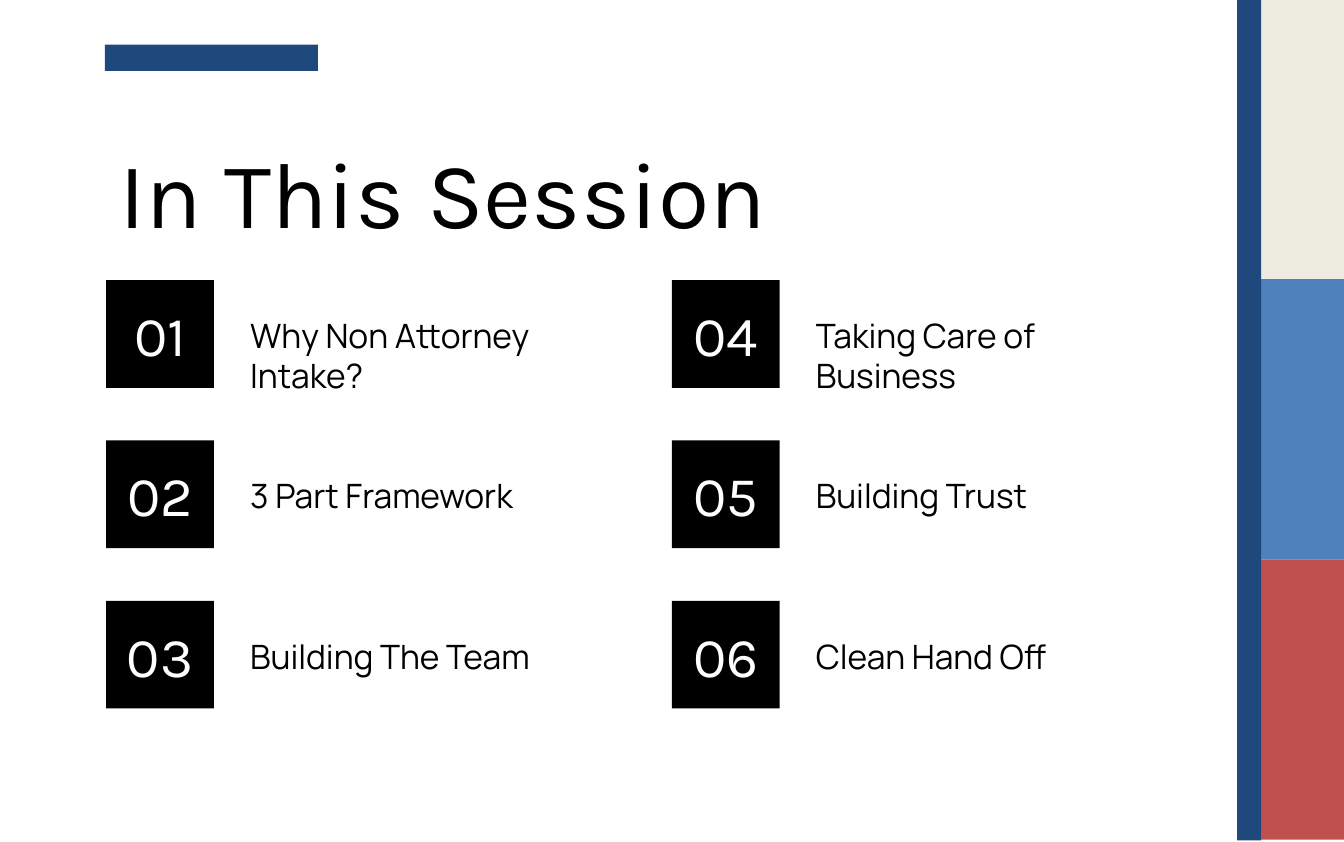
from dataclasses import dataclass

from pptx import Presentation
from pptx.dml.color import RGBColor
from pptx.enum.shapes import MSO_SHAPE
from pptx.enum.text import MSO_ANCHOR, MSO_AUTO_SIZE, PP_ALIGN
from pptx.util import Cm, Pt

RECTANGLE = MSO_SHAPE.RECTANGLE
TOP, MIDDLE = MSO_ANCHOR.TOP, MSO_ANCHOR.MIDDLE
LEFT, CENTER = PP_ALIGN.LEFT, PP_ALIGN.CENTER
NO_AUTOFIT = MSO_AUTO_SIZE.NONE
TITLE_ONLY = 5


@dataclass(frozen=True)
class Theme:
    black: str = "000000"
    white: str = "FFFFFF"
    navy: str = "1F497D"
    cream: str = "EEECE1"
    blue: str = "4F81BD"
    red: str = "C0504D"
    heading_font: str = "Karla"
    body_font: str = "Manrope"
    title_size: float = 56.5
    number_size: float = 33.8
    topic_size: float = 20.2
    inset: float = 0.28


class SlideBuilder:
    """Holds the theme and the slide; all lengths are in centimetres."""

    def __init__(self, slide, theme):
        self.slide = slide
        self.theme = theme

    def set_text(self, shape, text, font, size, color, align=LEFT, anchor=TOP):
        frame = shape.text_frame
        frame.auto_size = NO_AUTOFIT
        frame.word_wrap = True
        frame.vertical_anchor = anchor
        inset = Cm(self.theme.inset)
        frame.margin_left = frame.margin_right = inset
        frame.margin_top = frame.margin_bottom = inset
        frame.text = text
        paragraph = frame.paragraphs[0]
        paragraph.alignment = align
        paragraph.font.name = font
        paragraph.font.size = Pt(size)
        paragraph.font.color.rgb = RGBColor.from_string(color)

    def title(self, text, left, top, width, height):
        title = self.slide.shapes.title
        title.left, title.top = Cm(left), Cm(top)
        title.width, title.height = Cm(width), Cm(height)
        self.set_text(title, text, self.theme.heading_font, self.theme.title_size,
                      self.theme.black)

    def block(self, color, left, top, width, height):
        block = self.slide.shapes.add_shape(RECTANGLE, Cm(left), Cm(top), Cm(width), Cm(height))
        block.shadow.inherit = False
        block.fill.solid()
        block.fill.fore_color.rgb = RGBColor.from_string(color)
        block.line.fill.background()
        return block

    def number(self, text, left, top, side):
        square = self.block(self.theme.black, left, top, side, side)
        self.set_text(square, text, self.theme.heading_font, self.theme.number_size,
                      self.theme.white, CENTER, MIDDLE)

    def topic(self, text, left, top, width, height):
        box = self.slide.shapes.add_textbox(Cm(left), Cm(top), Cm(width), Cm(height))
        self.set_text(box, text, self.theme.body_font, self.theme.topic_size, self.theme.black)


def main():
    deck = Presentation()
    deck.slide_width, deck.slide_height = Cm(28.58), Cm(17.91)
    theme = Theme()
    page = SlideBuilder(deck.slides.add_slide(deck.slide_layouts[TITLE_ONLY]), theme)

    # Colour bands along the right edge
    band_height = 5.96
    for index, color in enumerate((theme.cream, theme.blue, theme.red)):
        page.block(color, 26.82, index * band_height - 0.02, 1.76, band_height)
    page.block(theme.navy, 26.31, 0, 0.51, 17.88)

    # Accent bar and title
    page.block(theme.navy, 2.23, 0.95, 4.53, 0.56)
    page.title("In This Session", 2.26, 2.59, 24.08, 1.78)

    # Numbered topics, filled column by column
    topics = ("Why Non Attorney Intake?", "3 Part Framework", "Building The Team",
              "Taking Care of Business", "Building Trust", "Clean Hand Off")
    rows = 3
    for index, topic in enumerate(topics):
        column, row = divmod(index, rows)
        left, top = 2.26 + column * 12.03, 5.96 + row * 3.41
        page.number(f"{index + 1:02}", left, top, 2.29)
        page.topic(topic, left + 2.78, top + 0.46, 7.92, 1.37)

    deck.save("out.pptx")


if __name__ == "__main__":
    main()
